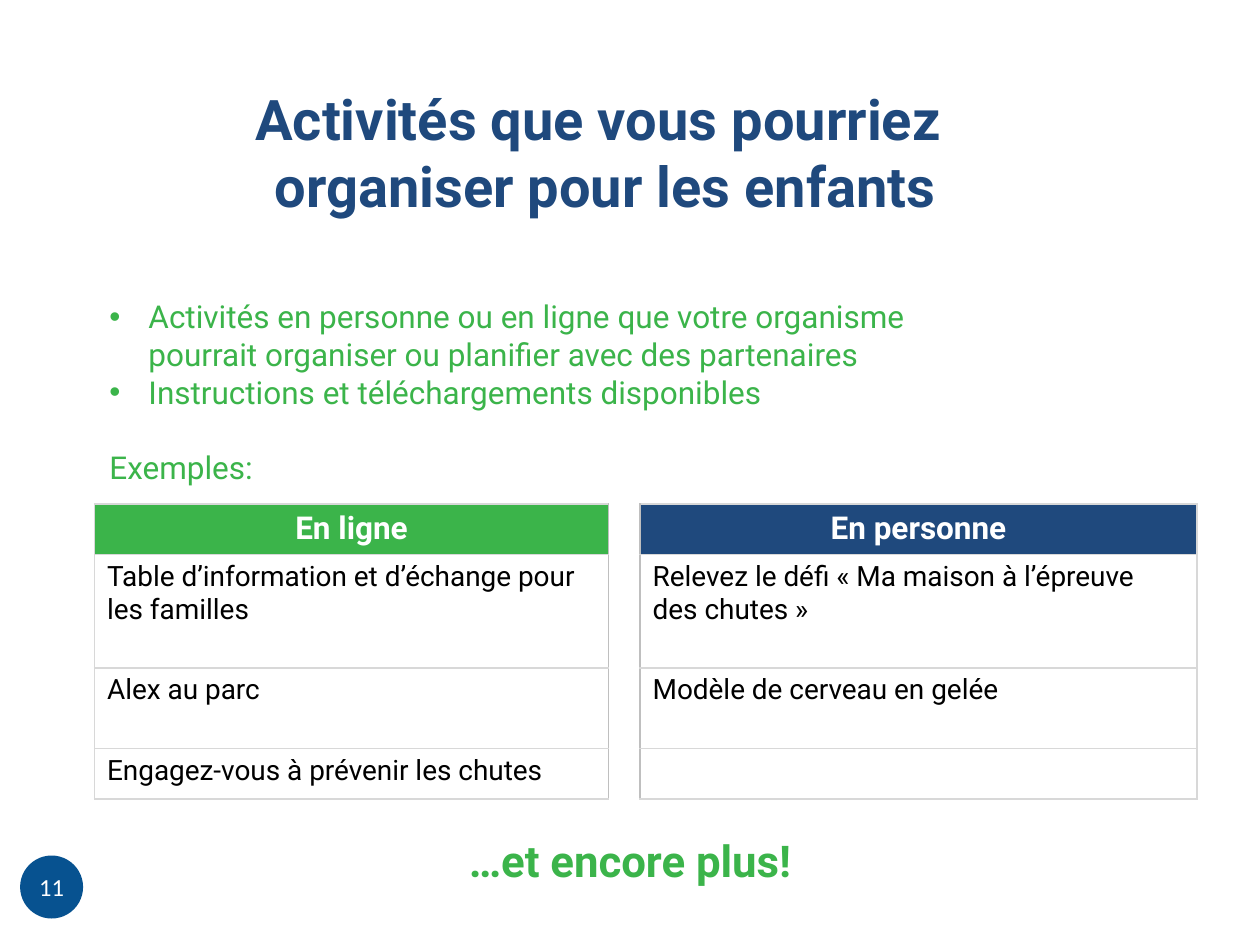
import pptx
import pptx.util
import pptx.dml.color
import pptx.enum.shapes
import pptx.enum.text
import pptx.oxml.ns
import lxml.etree

Inches = pptx.util.Inches
Pt = pptx.util.Pt
RGBColor = pptx.dml.color.RGBColor
ALIGN = pptx.enum.text.PP_ALIGN
ANCHOR = pptx.enum.text.MSO_ANCHOR

GREEN = RGBColor(0x3B, 0xB4, 0x4A)
NAVY = RGBColor(0x1F, 0x49, 0x7D)
BADGE_BLUE = RGBColor(0x07, 0x52, 0x90)
WHITE = RGBColor(0xFF, 0xFF, 0xFF)
BLACK = RGBColor(0, 0, 0)
LIGHT_GREY = RGBColor(0xD8, 0xD8, 0xD8)
MID_GREY = RGBColor(0xBF, 0xBF, 0xBF)

COLUMN_WIDTHS = [4.08, 0.25, 4.42]
ROW_HEIGHTS = [0.4, 0.9, 0.64, 0.4]
ACTIVITIES = {
    0: ("En ligne", GREEN, [
        "Table d’information et d’échange pour les familles",
        "Alex au parc",
        "Engagez-vous à prévenir les chutes",
    ]),
    2: ("En personne", NAVY, [
        "Relevez le défi « Ma maison à l’épreuve des chutes »",
        "Modèle de cerveau en gelée",
        "",
    ]),
}


def add_xml(parent, tag, **attributes):
    return lxml.etree.SubElement(parent, pptx.oxml.ns.qn(tag), **attributes)


def write(paragraph, words, size, color, bold=False, align=None, face="Roboto"):
    paragraph.alignment = align
    run = paragraph.add_run()
    run.text = words
    run.font.name = face
    run.font.size = Pt(size)
    run.font.bold = bold
    run.font.color.rgb = color


def add_text(slide, place, lines, size, color, bold=False, align=None, anchor=ANCHOR.TOP):
    frame = slide.shapes.add_textbox(*map(Inches, place)).text_frame
    frame.word_wrap = True
    frame.vertical_anchor = anchor
    for index, line in enumerate(lines):
        paragraph = frame.paragraphs[0] if index == 0 else frame.add_paragraph()
        write(paragraph, line, size, color, bold, align)
    return frame


def add_bullet(paragraph, color):
    properties = paragraph._p.get_or_add_pPr()
    properties.set("marL", str(Inches(0.31)))
    properties.set("indent", str(-Inches(0.31)))
    add_xml(add_xml(properties, "a:buClr"), "a:srgbClr", val=str(color))
    add_xml(properties, "a:buFont", typeface="Arial")
    add_xml(properties, "a:buChar", char="•")


def add_borders(cell, **sides):
    properties = cell._tc.get_or_add_tcPr()
    for position, (side, color) in enumerate(sides.items()):
        line = lxml.etree.Element(pptx.oxml.ns.qn("a:ln" + side), w=str(Pt(1)))
        if color is None:
            add_xml(line, "a:noFill")
        else:
            add_xml(add_xml(line, "a:solidFill"), "a:srgbClr", val=str(color))
        properties.insert(position, line)


def fill_cell(cell, color):
    cell.fill.solid()
    cell.fill.fore_color.rgb = color


def add_activities(slide):
    table = slide.shapes.add_table(
        len(ROW_HEIGHTS), len(COLUMN_WIDTHS),
        Inches(0.75), Inches(4), Inches(sum(COLUMN_WIDTHS)), Inches(sum(ROW_HEIGHTS)),
    ).table
    table.horz_banding = False
    for column, width in zip(table.columns, COLUMN_WIDTHS):
        column.width = Inches(width)
    for row, height in zip(table.rows, ROW_HEIGHTS):
        row.height = Inches(height)

    table.cell(0, 1).merge(table.cell(len(ROW_HEIGHTS) - 1, 1))
    for row in range(len(ROW_HEIGHTS)):
        gap = table.cell(row, 1)
        fill_cell(gap, WHITE)
        add_borders(gap, L=MID_GREY, R=MID_GREY, T=None, B=None)

    for column, (heading, color, activities) in ACTIVITIES.items():
        left, right = (LIGHT_GREY, MID_GREY) if column == 0 else (MID_GREY, LIGHT_GREY)
        for row, words in enumerate([heading] + activities):
            cell = table.cell(row, column)
            fill_cell(cell, color if row == 0 else WHITE)
            add_borders(cell, L=left, R=right, T=LIGHT_GREY, B=LIGHT_GREY)
            paragraph = cell.text_frame.paragraphs[0]
            if row == 0:
                write(paragraph, words, 18, WHITE, True, ALIGN.CENTER)
            elif words:
                write(paragraph, words, 16, BLACK)


def add_page_badge(slide):
    badge = slide.shapes.add_shape(
        pptx.enum.shapes.MSO_SHAPE.OVAL, Inches(0.16), Inches(6.79), Inches(0.5), Inches(0.5))
    badge.shadow.inherit = False
    badge.fill.solid()
    badge.fill.fore_color.rgb = BADGE_BLUE
    badge.line.fill.background()
    frame = badge.text_frame
    frame.margin_left = frame.margin_right = frame.margin_top = frame.margin_bottom = 0
    frame.vertical_anchor = ANCHOR.MIDDLE
    write(frame.paragraphs[0], "11", 14, WHITE, align=ALIGN.CENTER, face="Calibri")


def main():
    deck = pptx.Presentation()
    deck.slide_width, deck.slide_height = Inches(10), Inches(7.5)
    slide = deck.slides.add_slide(deck.slide_layouts[6])

    add_page_badge(slide)
    add_text(slide, (0.77, 0.58, 8.07, 1.25),
             ["Activités que vous pourriez ", "organiser pour les enfants"],
             32, NAVY, True, ALIGN.CENTER, ANCHOR.MIDDLE)
    introduction = add_text(slide, (0.77, 2.31, 6.58, 1.47), [
        "Activités en personne ou en ligne que votre organisme "
        "pourrait organiser ou planifier avec des partenaires",
        "Instructions et téléchargements disponibles",
        "Exemples:",
    ], 18, GREEN)
    *points, examples = introduction.paragraphs
    for point in points:
        add_bullet(point, GREEN)
    examples.space_before = Pt(21.5)
    add_activities(slide)
    add_text(slide, (3.47, 6.57, 3.06, 0.52), ["…et encore plus!"],
             25, GREEN, True, ALIGN.CENTER)

    deck.save("out.pptx")


if __name__ == "__main__":
    main()
